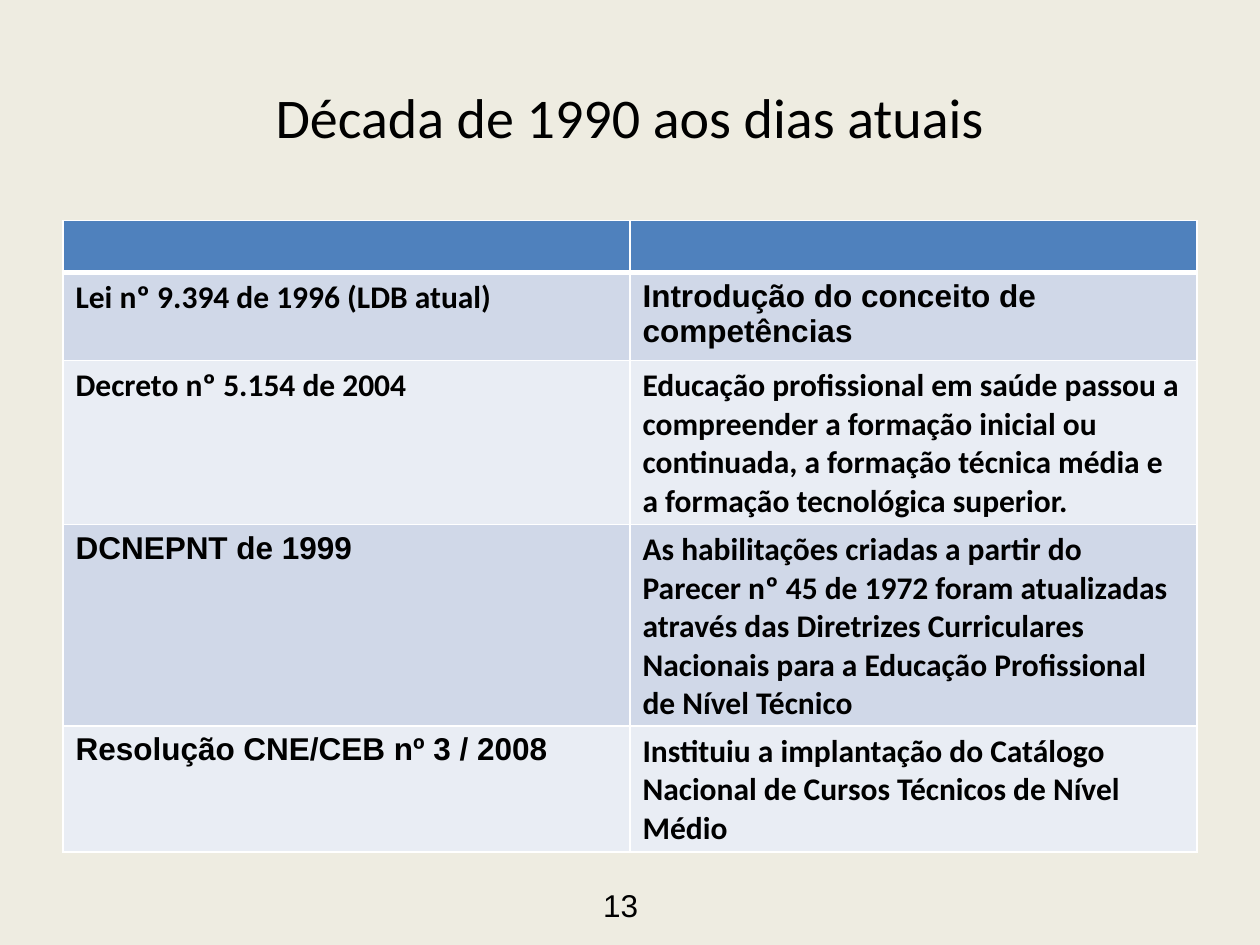
import pptx
import pptx.util
import pptx.dml.color
import pptx.enum.text
import pptx.oxml.ns
import lxml.etree

Cm = pptx.util.Cm
Pt = pptx.util.Pt

COLORS = {
    "background": "EEECE1",
    "text": "000000",
    "header": "4F81BD",
    "odd": "D0D8E8",
    "even": "E9EDF4",
    "border": "FFFFFF",
}
TITLE = "Década de 1990 aos dias atuais"
PAGE_NUMBER = "13"
ROWS = [
    [("", "Calibri"), ("", "Calibri")],
    [("Lei nº 9.394 de 1996 (LDB atual)", "Calibri"),
     ("Introdução do conceito de competências", "Arial")],
    [("Decreto nº 5.154 de 2004", "Calibri"),
     ("Educação profissional em saúde passou a compreender a formação inicial ou "
      "continuada, a formação técnica média e a formação tecnológica superior.", "Calibri")],
    [("DCNEPNT de 1999", "Arial"),
     ("As habilitações criadas a partir do Parecer nº 45 de 1972 foram atualizadas "
      "através das Diretrizes Curriculares Nacionais para a Educação Profissional "
      "de Nível Técnico", "Calibri")],
    [("Resolução CNE/CEB nº 3 / 2008", "Arial"),
     ("Instituiu a implantação do Catálogo Nacional de Cursos Técnicos de Nível Médio",
      "Calibri")],
]
MARGIN, WIDTH = 1.27, 22.86
ROW_HEIGHT = 1.04


def rgb(name):
    return pptx.dml.color.RGBColor.from_string(COLORS[name])


def add_run(p, text, font, size, bold=False):
    r = p.add_run()
    r.text = text
    r.font.name = font
    r.font.size = Pt(size)
    r.font.bold = bold
    r.font.color.rgb = rgb("text")


def add_text(slide, box, text, font, size, wrap=True):
    sp = slide.shapes.add_textbox(*[Cm(v) for v in box])
    tf = sp.text_frame
    tf.word_wrap = wrap
    add_run(tf.paragraphs[0], text, font, size)
    return tf


def set_borders(cell, widths):
    qn = pptx.oxml.ns.qn
    tc_pr = cell._tc.get_or_add_tcPr()
    for side, width in widths.items():
        ln = lxml.etree.SubElement(tc_pr, qn(f"a:ln{side}"), w=str(Pt(width)))
        fill = lxml.etree.SubElement(ln, qn("a:solidFill"))
        lxml.etree.SubElement(fill, qn("a:srgbClr"), val=COLORS["border"])


def add_content_table(slide):
    frame = slide.shapes.add_table(
        len(ROWS), len(ROWS[0]), Cm(MARGIN), Cm(4.45), Cm(WIDTH), Cm(ROW_HEIGHT * len(ROWS)))
    table = frame.table
    for i, row in enumerate(ROWS):
        table.rows[i].height = Cm(ROW_HEIGHT)
        fill = "header" if i == 0 else ("even", "odd")[i % 2]
        top, bottom = 3 if i == 1 else 1, 3 if i == 0 else 1
        for j, (text, font) in enumerate(row):
            cell = table.cell(i, j)
            set_borders(cell, {"L": 1, "R": 1, "T": top, "B": bottom})
            cell.fill.solid()
            cell.fill.fore_color.rgb = rgb(fill)
            if text:
                add_run(cell.text_frame.paragraphs[0], text, font, 18, bold=True)


def main():
    prs = pptx.Presentation()
    prs.slide_width, prs.slide_height = Cm(25.4), Cm(19.05)
    slide = prs.slides.add_slide(prs.slide_layouts[6])
    slide.background.fill.solid()
    slide.background.fill.fore_color.rgb = rgb("background")

    tf = add_text(slide, (MARGIN, 0.76, WIDTH, 3.18), TITLE, "Calibri", 32)
    tf.vertical_anchor = pptx.enum.text.MSO_ANCHOR.MIDDLE
    tf.paragraphs[0].alignment = pptx.enum.text.PP_ALIGN.CENTER

    add_content_table(slide)

    tf = add_text(slide, (11.91, 17.73, 1.22, 1.02), PAGE_NUMBER, "Arial", 18, wrap=False)
    tf.auto_size = pptx.enum.text.MSO_AUTO_SIZE.SHAPE_TO_FIT_TEXT

    prs.save("out.pptx")


if __name__ == "__main__":
    main()
